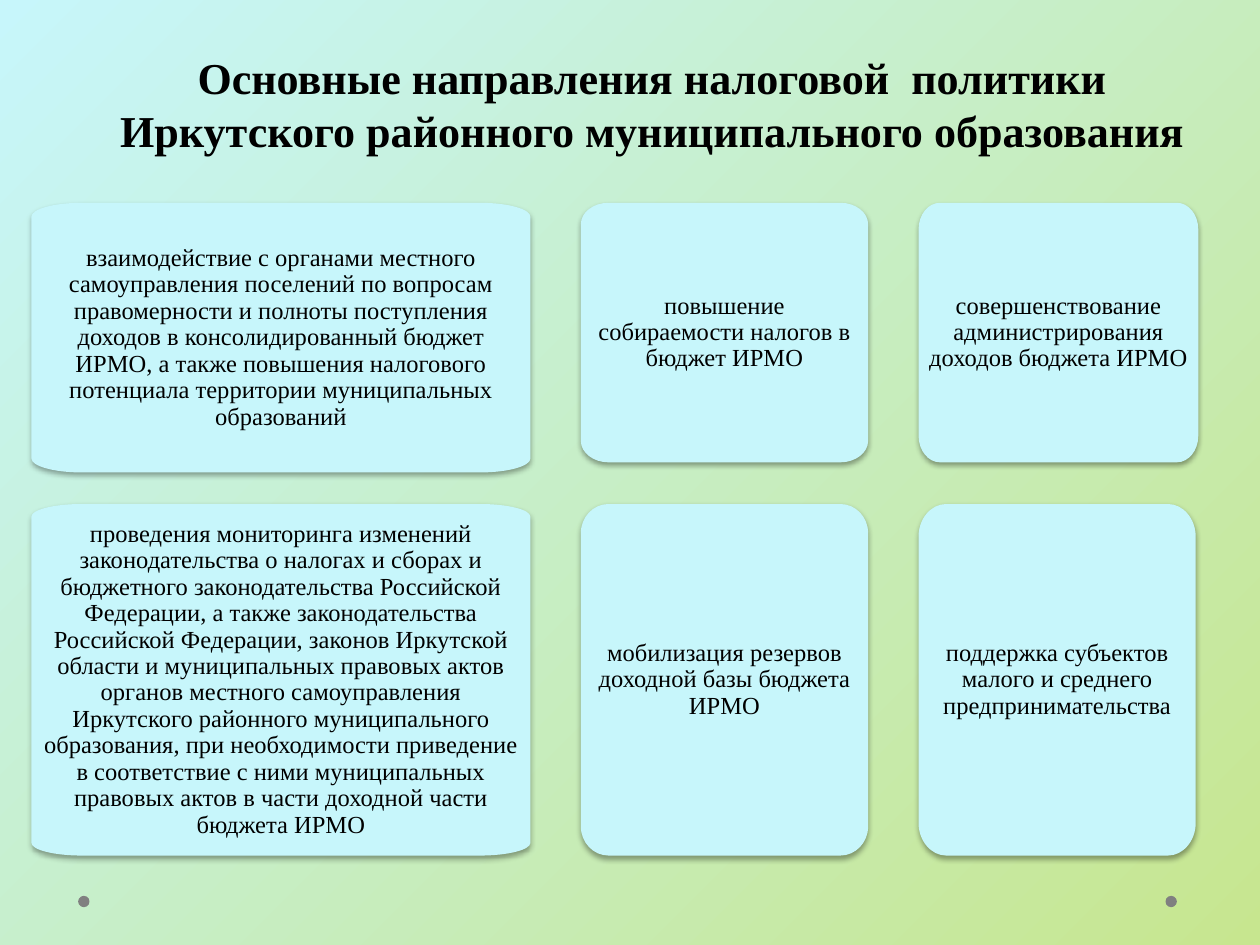
from dataclasses import dataclass

from lxml.etree import Element, SubElement
from pptx import Presentation
from pptx.dml.color import RGBColor
from pptx.enum.shapes import MSO_SHAPE
from pptx.enum.text import MSO_ANCHOR, PP_ALIGN
from pptx.oxml.ns import qn
from pptx.shapes.base import BaseShape
from pptx.slide import Slide
from pptx.util import Inches, Pt

COLORS = {"card": "C7F6FB", "green": "C7E68F", "dot": "808080", "text": "000000"}
FONT = "Times New Roman"
ROW_TOPS = (1.61, 4.0)
COLUMN_LEFTS = (0.25, 4.61, 7.29)
CORNER_PULL = 0.55


@dataclass
class Card:
    row: int
    column: int
    width: float
    height: float
    radius_x: float
    radius_y: float
    text: str
    inset: float = 0.1


CARDS = (
    Card(0, 0, 3.96, 2.14, 0.4, 0.11,
         "взаимодействие с органами местного самоуправления поселений по вопросам "
         "правомерности и полноты поступления доходов в консолидированный бюджет ИРМО, "
         "а также повышения налогового потенциала территории муниципальных образований"),
    Card(1, 2, 2.2, 2.79, 0.22, 0.26,
         "поддержка субъектов малого и среднего предпринимательства"),
    Card(0, 1, 2.28, 2.06, 0.22, 0.17, "повышение собираемости налогов в бюджет ИРМО"),
    Card(1, 1, 2.28, 2.79, 0.22, 0.23, "мобилизация резервов доходной базы бюджета ИРМО"),
    Card(0, 2, 2.22, 2.06, 0.17, 0.21,
         "совершенствование администрирования доходов бюджета ИРМО", 0.08),
    Card(1, 0, 3.96, 2.79, 0.4, 0.1,
         "проведения мониторинга изменений законодательства о налогах и сборах и "
         "бюджетного законодательства Российской Федерации, а также законодательства "
         "Российской Федерации, законов Иркутской области и муниципальных правовых актов "
         "органов местного самоуправления Иркутского районного муниципального "
         "образования, при необходимости приведение в соответствие с ними муниципальных "
         "правовых актов в части доходной части бюджета ИРМО"),
)


def color(name: str) -> RGBColor:
    return RGBColor.from_string(COLORS[name])


def paint_background(page: Slide) -> None:
    fill = page.background.fill
    fill.gradient()
    fill.gradient_angle = 315
    for stop, name in zip(fill.gradient_stops, ("card", "green")):
        stop.color.rgb = color(name)


def write_text(box: BaseShape, text: str, size: float, bold: bool,
               anchor: MSO_ANCHOR, line_spacing: float) -> None:
    frame = box.text_frame
    frame.word_wrap = True
    frame.vertical_anchor = anchor
    paragraph = frame.paragraphs[0]
    paragraph.alignment = PP_ALIGN.CENTER
    paragraph.line_spacing = line_spacing
    span = paragraph.add_run()
    span.text = text
    for name, value in {"name": FONT, "size": Pt(size), "bold": bold}.items():
        setattr(span.font, name, value)
    span.font.color.rgb = color("text")


def fill_plain(shape: BaseShape, name: str) -> None:
    shape.shadow.inherit = False
    shape.fill.solid()
    shape.fill.fore_color.rgb = color(name)
    shape.line.fill.background()


def add_soft_shadow(shape: BaseShape) -> None:
    effects = shape.element.spPr.find(qn("a:effectLst"))
    shadow = SubElement(effects, qn("a:outerShdw"), blurRad=str(Pt(3.1)),
                        dist=str(Pt(1.8)), dir="5400000", rotWithShape="0")
    shade = SubElement(shadow, qn("a:srgbClr"), val=COLORS["text"])
    SubElement(shade, qn("a:alpha"), val="35000")


def card_outline(card: Card) -> list[tuple[int, int]]:
    """Ends of the straight sides, counter-clockwise from the top of the right side."""
    left, top = COLUMN_LEFTS[card.column], ROW_TOPS[card.row]
    right, bottom = left + card.width, top + card.height
    near_x, far_x = left + card.radius_x, right - card.radius_x
    near_y, far_y = top + card.radius_y, bottom - card.radius_y
    points = ((right, near_y), (far_x, top), (near_x, top), (left, near_y),
              (left, far_y), (near_x, bottom), (far_x, bottom), (right, far_y))
    return [(Inches(x), Inches(y)) for x, y in points]


def round_corners(shape: BaseShape) -> None:
    """Turn each slanted line between two sides into a curve, and round the closing corner."""
    outline = next(shape.element.iter(qn("a:path")))
    points = [(int(point.get("x")), int(point.get("y")))
              for point in outline.iter(qn("a:pt"))]
    lines = outline.findall(qn("a:lnTo"))
    for index in range(0, len(points), 2):
        start, end = points[index], points[index + 1]
        starts_upright = index % 4 == 0
        corner = (start[0], end[1]) if starts_upright else (end[0], start[1])
        curve = Element(qn("a:cubicBezTo"))
        for anchor, pull in ((start, CORNER_PULL), (end, CORNER_PULL), (end, 0)):
            x, y = (round(a + pull * (c - a)) for a, c in zip(anchor, corner))
            SubElement(curve, qn("a:pt"), x=str(x), y=str(y))
        outline.replace(lines[index], curve)


def add_card(page: Slide, card: Card) -> None:
    start, *others = card_outline(card)
    builder = page.shapes.build_freeform(*start)
    builder.add_line_segments(others, close=True)
    shape = builder.convert_to_shape()
    round_corners(shape)
    fill_plain(shape, "card")
    add_soft_shadow(shape)
    for side in ("left", "top", "right", "bottom"):
        setattr(shape.text_frame, f"margin_{side}", Inches(card.inset))
    write_text(shape, card.text, 14, False, MSO_ANCHOR.MIDDLE, 0.9)


def add_title(page: Slide) -> None:
    box = page.shapes.add_textbox(Inches(0.75), Inches(0.21), Inches(8.85), Inches(1.08))
    write_text(box, "Основные направления налоговой  политики "
               "Иркутского районного муниципального образования",
               25.2, True, MSO_ANCHOR.BOTTOM, 1.0)


def add_dot(page: Slide, left: float) -> None:
    dot = page.shapes.add_shape(MSO_SHAPE.OVAL, Inches(left), Inches(7.11),
                                Inches(0.09), Inches(0.09))
    fill_plain(dot, "dot")


def main() -> None:
    deck = Presentation()
    deck.slide_width, deck.slide_height = Inches(10), Inches(7.5)
    page = deck.slides.add_slide(deck.slide_layouts[6])
    paint_background(page)
    for left in (9.25, 0.62):
        add_dot(page, left)
    add_title(page)
    for card in CARDS:
        add_card(page, card)
    deck.save("out.pptx")


if __name__ == "__main__":
    main()
